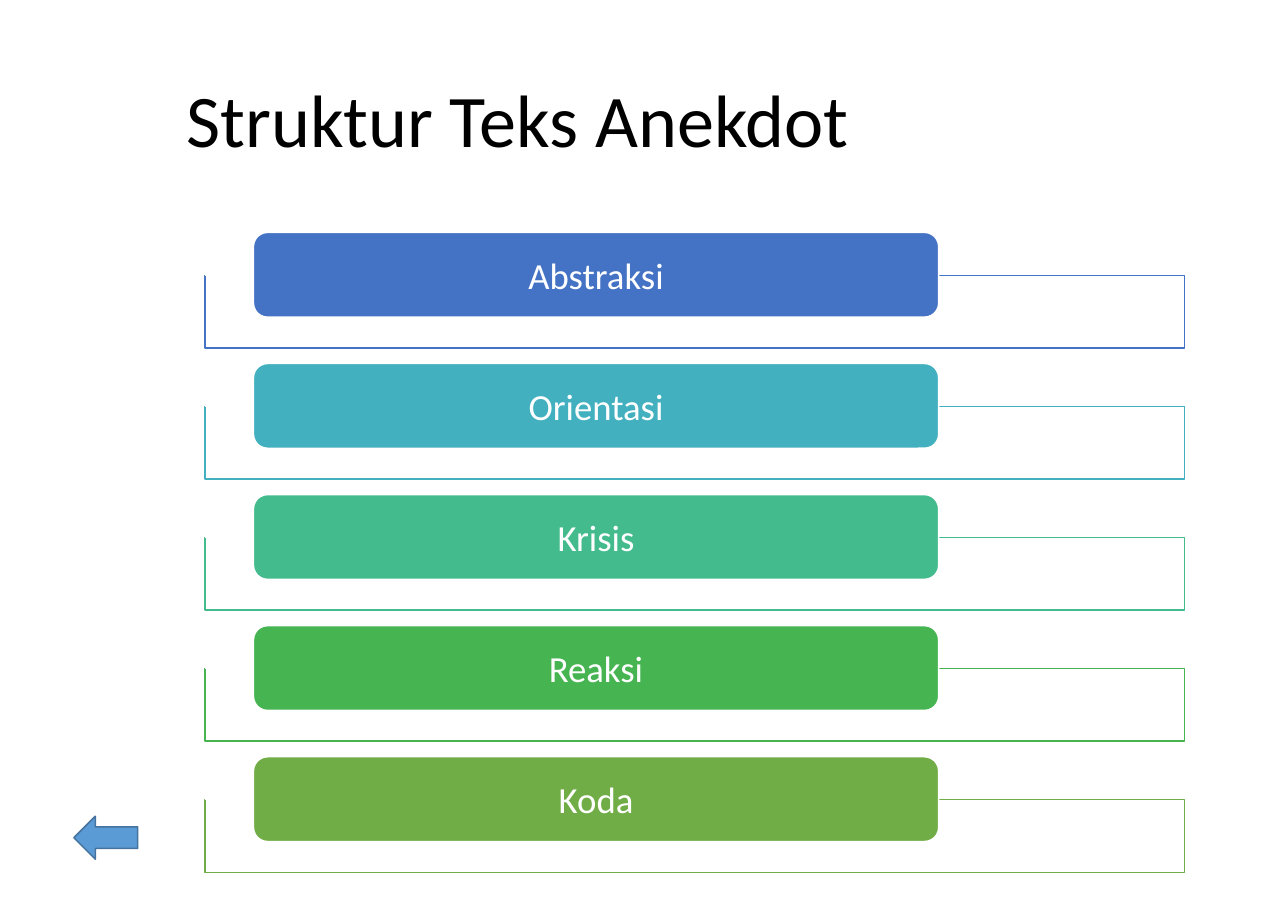
from dataclasses import dataclass

from lxml.etree import SubElement
from pptx import Presentation
from pptx.dml.color import RGBColor
from pptx.enum.shapes import MSO_CONNECTOR, MSO_SHAPE
from pptx.enum.text import MSO_ANCHOR, MSO_AUTO_SIZE, PP_ALIGN
from pptx.oxml.ns import qn
from pptx.util import Inches, Pt


@dataclass(frozen=True)
class Theme:
    font: str = "Calibri"
    title_size: float = 48.5
    label_size: float = 24
    line_width: float = 1
    text: str = "000000"
    white: str = "FFFFFF"
    arrow: str = "5B9BD5"
    arrow_line: str = "43739E"
    stages: tuple = ("4472C4", "43B0C0", "43BB8D", "45B451", "71AD47")


THEME = Theme()
STAGES = ("Abstraksi", "Orientasi", "Krisis", "Reaksi", "Koda")
FIRST_TOP = 2.11
STEP = 1.19
FRAME_LEFT = 1.86
FRAME_DROP = 0.39
LABEL_LEFT = 2.3


def rgb(value):
    return RGBColor.from_string(value)


def style_text(tf, size, color):
    tf.word_wrap = True
    tf.vertical_anchor = MSO_ANCHOR.MIDDLE
    p = tf.paragraphs[0]
    p.alignment = PP_ALIGN.CENTER
    p.font.name = THEME.font
    p.font.size = Pt(size)
    p.font.color.rgb = rgb(color)
    return p


def add_title(s, text):
    sp = s.shapes.title
    sp.left, sp.top = Inches(-0.51), Inches(0.2)
    sp.width, sp.height = Inches(10.42), Inches(1.85)
    tf = sp.text_frame
    tf.text = text
    tf.auto_size = MSO_AUTO_SIZE.NONE
    p = style_text(tf, THEME.title_size, THEME.text)
    p.line_spacing = 0.9


def add_block(s, kind, left, top, width, height, fill, line):
    sp = s.shapes.add_shape(
        kind, Inches(left), Inches(top), Inches(width), Inches(height)
    )
    sp.shadow.inherit = False
    sp.fill.solid()
    sp.fill.fore_color.rgb = rgb(fill)
    sp.line.color.rgb = rgb(line)
    sp.line.width = Pt(THEME.line_width)
    return sp


def add_frame(s, top, color):
    sp = add_block(
        s, MSO_SHAPE.RECTANGLE, FRAME_LEFT, top, 8.89, 0.66, THEME.white, color
    )
    fill = sp._element.spPr.find(qn("a:solidFill"))
    SubElement(fill[0], qn("a:alpha"), val="90000")


def add_label(s, text, top, color):
    sp = add_block(
        s, MSO_SHAPE.ROUNDED_RECTANGLE, LABEL_LEFT, top, 6.22, 0.77,
        color, THEME.white,
    )
    tf = sp.text_frame
    tf.text = text
    tf.margin_left = tf.margin_right = Inches(0.24)
    tf.margin_top = tf.margin_bottom = 0
    style_text(tf, THEME.label_size, THEME.white)


def add_gap(s, top):
    line = s.shapes.add_connector(
        MSO_CONNECTOR.STRAIGHT,
        Inches(FRAME_LEFT), Inches(top), Inches(LABEL_LEFT), Inches(top),
    )
    line.line.color.rgb = rgb(THEME.white)
    line.line.width = Pt(THEME.line_width)
    SubElement(line._element.spPr, qn("a:effectLst"))


def add_stage(s, text, top, color):
    add_frame(s, top + FRAME_DROP, color)
    add_label(s, text, top, color)
    add_gap(s, top + FRAME_DROP)


def main():
    prs = Presentation()
    prs.slide_width, prs.slide_height = Inches(11.69), Inches(8.27)
    s = prs.slides.add_slide(prs.slide_layouts.get_by_name("Title Only"))
    add_title(s, "Struktur Teks Anekdot")
    for i, (text, color) in enumerate(zip(STAGES, THEME.stages)):
        add_stage(s, text, FIRST_TOP + i * STEP, color)
    add_block(
        s, MSO_SHAPE.LEFT_ARROW, 0.67, 7.41, 0.58, 0.39,
        THEME.arrow, THEME.arrow_line,
    )
    prs.save("out.pptx")


if __name__ == "__main__":
    main()
